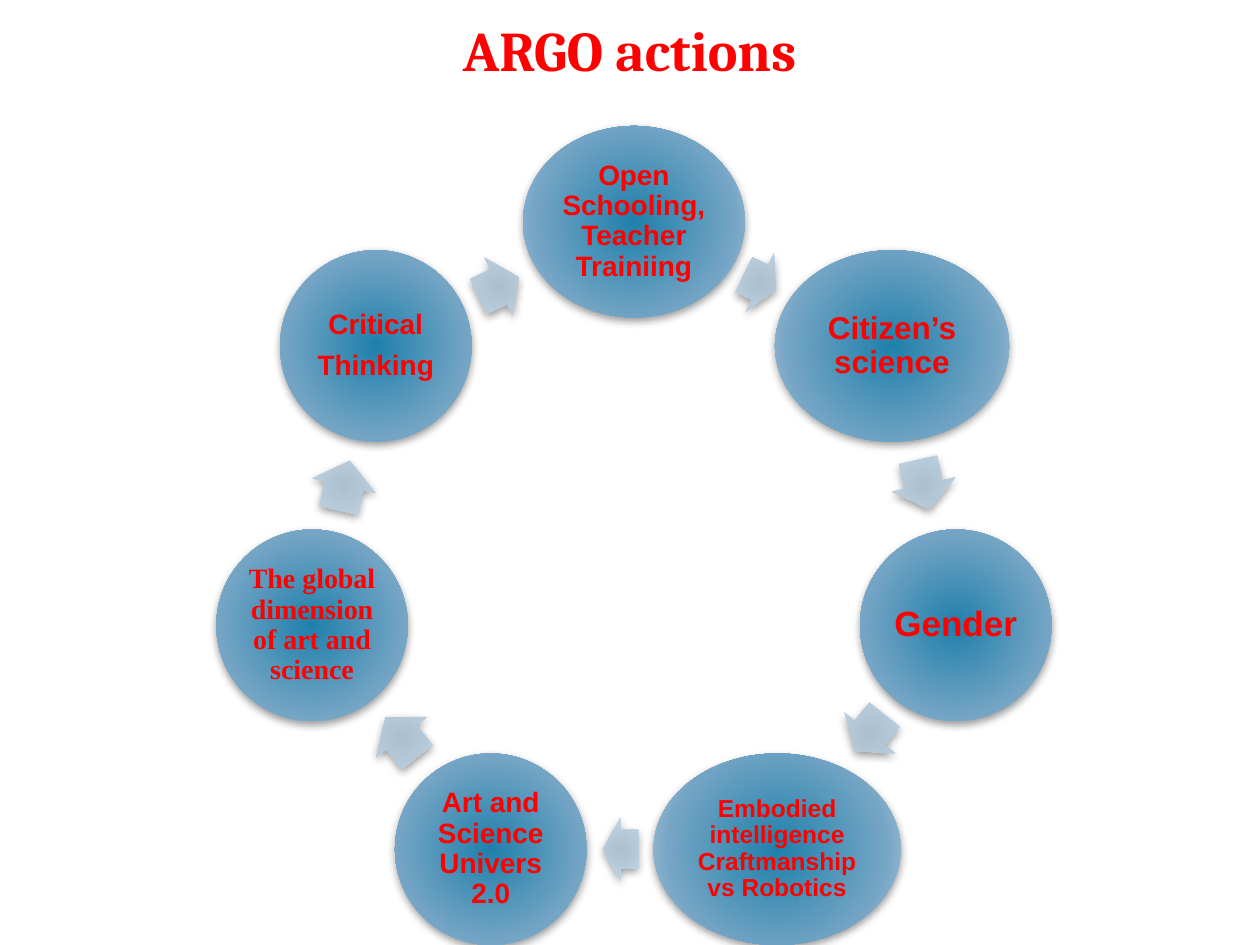
from dataclasses import dataclass
from math import cos, pi, sin

from pptx import Presentation, oxml, util as u
from pptx.dml import color
from pptx.enum import shapes, text

NS = 'xmlns:a="http://schemas.openxmlformats.org/drawingml/2006/main"'


@dataclass(frozen=True)
class Theme:
    red: str = "FF0000"
    shade: str = "000000"
    node: tuple = ("2080AB", "75A5C5", "B8CCDC")
    arrow: tuple = ("AABFD0", "BCCFDE", "D8E2EB")
    stops: tuple = (0, 69, 100)
    head: str = "Cambria"
    sans: str = "Arial"
    serif: str = "Times New Roman"
    title: int = 32
    large: int = 20
    mid: int = 18
    base: int = 16
    small: int = 14


T = Theme()

NODES = [
    (["Open Schooling, Teacher Trainiing"], 4.47, T.base, T.sans),
    (["Citizen’s science"], 4.72, T.mid, T.sans),
    (["Gender"], 3.86, T.large, T.sans),
    (["Embodied intelligence Craftmanship vs Robotics"], 4.98, T.small, T.sans),
    (["Art and Science Univers 2.0"], 3.86, T.base, T.sans),
    (["The global dimension of art and science"], 3.86, T.base, T.serif),
    (["Critical", "Thinking"], 3.86, T.base, T.sans),
]
ARROWS = [(0.71, -0.07), (1.02, -0.02), (0.94, -0.11), (0.71, 0.27),
          (1.02, 0), (1.02, 0), (0.89, -0.14)]
NODE_H = 3.86
ARROW_H = 1.3


def apply(item, values):
    for name, value in values.items():
        setattr(item, name, value)


def write(frame, lines, size, face, anchor, inset, lead, after):
    sides = ("left", "top", "right", "bottom")
    apply(frame, {f"margin_{side}": u.Cm(inset) for side in sides})
    apply(frame, {"word_wrap": True, "vertical_anchor": anchor})
    for i, line in enumerate(lines):
        para = frame.paragraphs[0] if i == 0 else frame.add_paragraph()
        apply(para, {"alignment": text.PP_ALIGN.CENTER, "line_spacing": lead,
                     "space_after": u.Pt(after * size)})
        run = para.add_run()
        run.text = line
        apply(run.font, {"name": face, "size": u.Pt(size), "bold": True})
        run.font.color.rgb = color.RGBColor.from_string(T.red)


def glow(shape, tones):
    stops = "".join(
        f'<a:gs pos="{pos * 1000}"><a:srgbClr val="{tone}"/></a:gs>'
        for pos, tone in zip(T.stops, tones))
    rect = " ".join(f'{side}="100000"' for side in "ltrb")
    props = shape.element.spPr
    props.append(oxml.parse_xml(
        f'<a:gradFill {NS} rotWithShape="1"><a:gsLst>{stops}</a:gsLst>'
        f'<a:path path="circle"><a:fillToRect {rect}/></a:path></a:gradFill>'))
    shape.line.fill.background()
    props.append(oxml.parse_xml(
        f'<a:effectLst {NS}><a:outerShdw blurRad="{u.Pt(5)}" dist="{u.Pt(2)}" '
        f'dir="5400000" rotWithShape="0"><a:srgbClr val="{T.shade}">'
        f'<a:alpha val="40000"/></a:srgbClr></a:outerShdw></a:effectLst>'))


def place(slide, kind, mid, wide, high, tones):
    x, y = mid
    shape = slide.shapes.add_shape(
        kind, u.Cm(x - wide / 2), u.Cm(y - high / 2), u.Cm(wide), u.Cm(high))
    glow(shape, tones)
    return shape


def title(slide, box):
    label = slide.shapes.add_textbox(*map(u.Cm, box))
    write(label.text_frame, ["ARGO actions"], T.title, T.head,
          text.MSO_ANCHOR.BOTTOM, 0.13, 1, 0)


def ring(slide, box):
    left, top, wide, high = box
    count = len(NODES)
    step = 2 * pi / count
    reach = (high - NODE_H) / (1 + cos(step / 2))
    hub = left + wide / 2, top + NODE_H / 2 + reach

    def spot(turn, dist):
        return hub[0] + dist * sin(turn), hub[1] - dist * cos(turn)

    for i, (lines, width, size, face) in enumerate(NODES):
        node = place(slide, shapes.MSO_SHAPE.OVAL, spot(i * step, reach),
                     width, NODE_H, T.node)
        write(node.text_frame, lines, size, face,
              text.MSO_ANCHOR.MIDDLE, 0.06, 0.9, 0.35)
        width, shift = ARROWS[i]
        turn = (i + 0.5) * step
        x, y = spot(turn, reach * cos(step / 2))
        mid = x + shift * cos(turn), y + shift * sin(turn)
        arrow = place(slide, shapes.MSO_SHAPE.RIGHT_ARROW, mid,
                      width, ARROW_H, T.arrow)
        arrow.rotation = round(turn * 180 / pi, 1)
        arrow.adjustments[0] = 0.6
        arrow.adjustments[1] = 0.5


def main():
    deck = Presentation()
    apply(deck, {"slide_width": u.Cm(25.4), "slide_height": u.Cm(19.05)})
    slide = deck.slides.add_slide(deck.slide_layouts[6])
    title(slide, (1.52, 0.3, 22.35, 1.5))
    ring(slide, (4.36, 2.54, 16.84, 16.51))
    deck.save("out.pptx")


if __name__ == "__main__":
    main()
